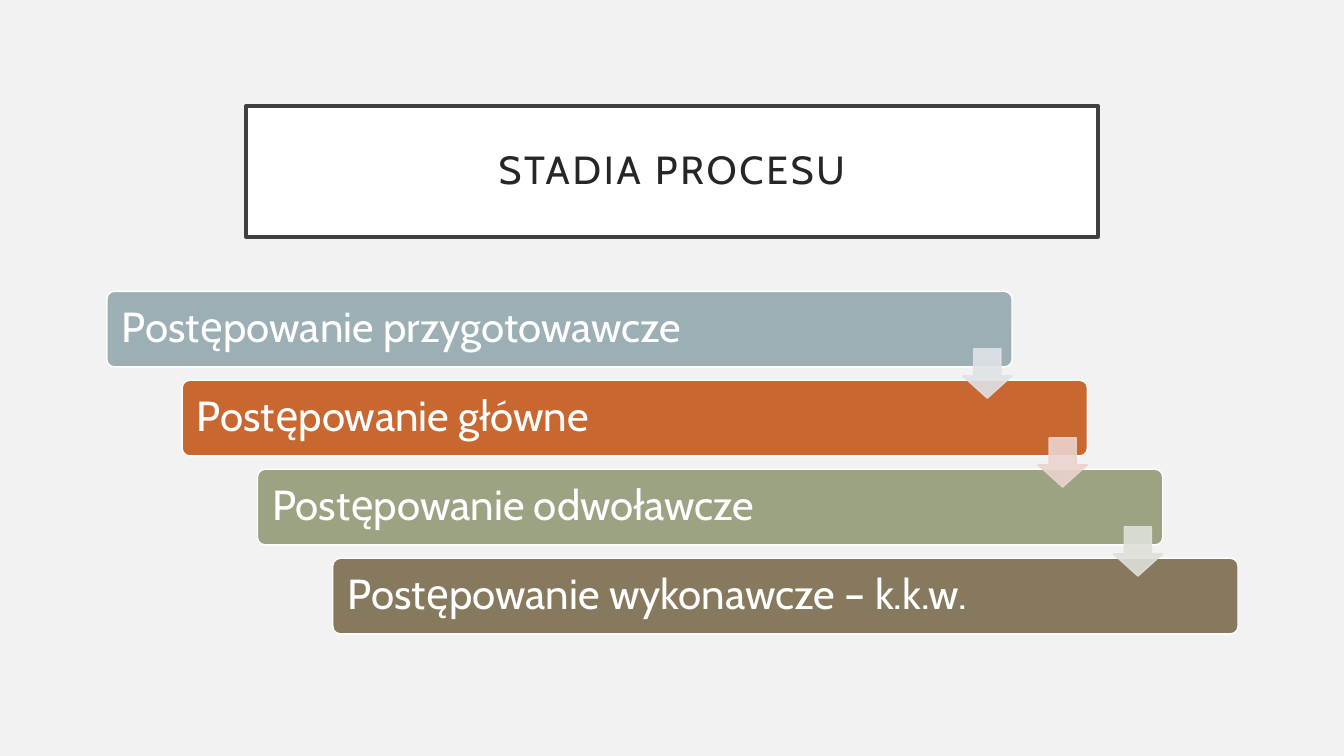
"""Build the slide showing the stages of a process as a descending staircase."""
from lxml import etree
from pptx import Presentation
from pptx.dml.color import RGBColor
from pptx.enum import shapes, text
from pptx.oxml.ns import qn
from pptx.util import Pt

TITLE = "STADIA PROCESU"
STAGES = [
    ("Postępowanie przygotowawcze", "steel"),
    ("Postępowanie główne", "orange"),
    ("Postępowanie odwoławcze", "sage"),
    ("Postępowanie wykonawcze – k.k.w.", "brown"),
]
ARROWS = ["pale steel", "pale orange", "pale sage"]
COLOURS = {
    "background": "F2F2F2", "white": "FFFFFF", "frame": "404040", "ink": "262626",
    "steel": "9BAFB5", "orange": "C96731", "sage": "9CA383", "brown": "87795D",
    "pale steel": "DEE3E5", "pale orange": "EBD3CE", "pale sage": "DEE0D9",
}
FONT = "Cabin"
LEFT, TOP, WIDTH, HEIGHT = 76.3, 208.1, 646.6, 54
STEP_X, STEP_Y = 53.8, 63.55
ARROW_SIZE, ARROW_DROP = 35.3, 41


def colour(name):
    return RGBColor.from_string(COLOURS[name])


def add_block(slide, kind, box, fill, line, line_width=1, adjustments=(), opacity=100):
    block = slide.shapes.add_shape(kind, *map(Pt, box))
    block.shadow.inherit = False
    for index, value in enumerate(adjustments):
        block.adjustments[index] = value
    block.fill.solid()
    block.fill.fore_color.rgb = colour(fill)
    block.line.color.rgb = colour(line)
    block.line.width = Pt(line_width)
    if opacity < 100:
        for tint in block._element.spPr.iter(qn("a:srgbClr")):
            etree.SubElement(tint, qn("a:alpha"), val=str(opacity * 1000))
    return block


def write(block, words, size, ink, align, inset, spacing=0):
    frame = block.text_frame
    frame.word_wrap = True
    frame.vertical_anchor = text.MSO_ANCHOR.MIDDLE
    frame.margin_left = frame.margin_right = Pt(inset)
    frame.margin_top = frame.margin_bottom = Pt(inset)
    paragraph = frame.paragraphs[0]
    paragraph.alignment = align
    paragraph.line_spacing = 0.9
    run = paragraph.add_run()
    run.text = words
    run.font.name = FONT
    run.font.size = Pt(size)
    run.font.color.rgb = colour(ink)
    if spacing:
        run._r.get_or_add_rPr().set("spc", str(spacing * 100))


def main():
    deck = Presentation()
    deck.slide_width, deck.slide_height = Pt(960), Pt(540)
    slide = deck.slides.add_slide(deck.slide_layouts[6])
    slide.background.fill.solid()
    slide.background.fill.fore_color.rgb = colour("background")

    preset = shapes.MSO_SHAPE
    title = add_block(slide, preset.RECTANGLE, (175.7, 75.6, 608.6, 93.6),
                      "white", "frame", line_width=2.5)
    write(title, TITLE, size=28, ink="ink", align=text.PP_ALIGN.CENTER, inset=14.4, spacing=2)

    for step, (words, fill) in enumerate(STAGES):
        box = (LEFT + step * STEP_X, TOP + step * STEP_Y, WIDTH, HEIGHT)
        stage = add_block(slide, preset.ROUNDED_RECTANGLE, box, fill, "white", adjustments=[0.1])
        write(stage, words, size=30, ink="white", align=text.PP_ALIGN.LEFT, inset=9)

    for step, fill in enumerate(ARROWS):
        box = (LEFT + WIDTH - ARROW_SIZE + step * STEP_X, TOP + ARROW_DROP + step * STEP_Y,
               ARROW_SIZE, ARROW_SIZE)
        add_block(slide, preset.DOWN_ARROW, box, fill, fill,
                  adjustments=[0.55, 0.45], opacity=90)

    deck.save("out.pptx")


if __name__ == "__main__":
    main()
